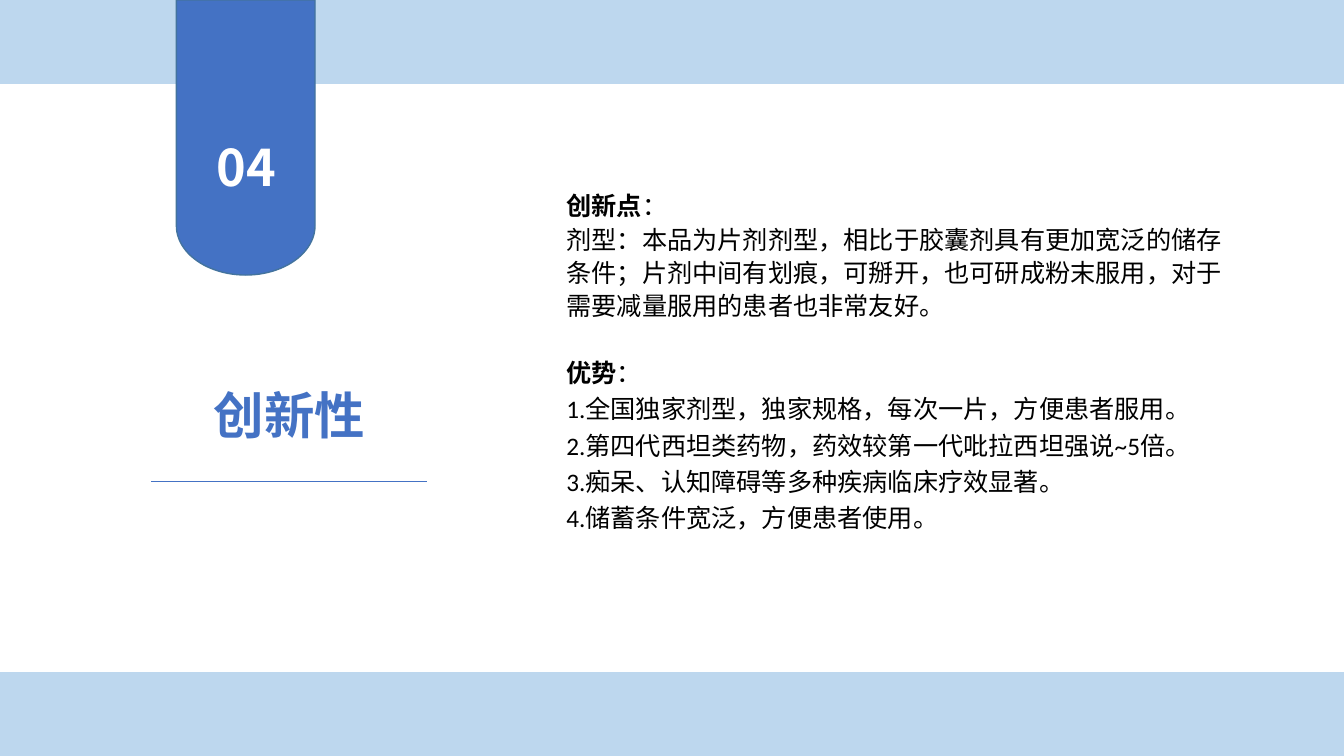
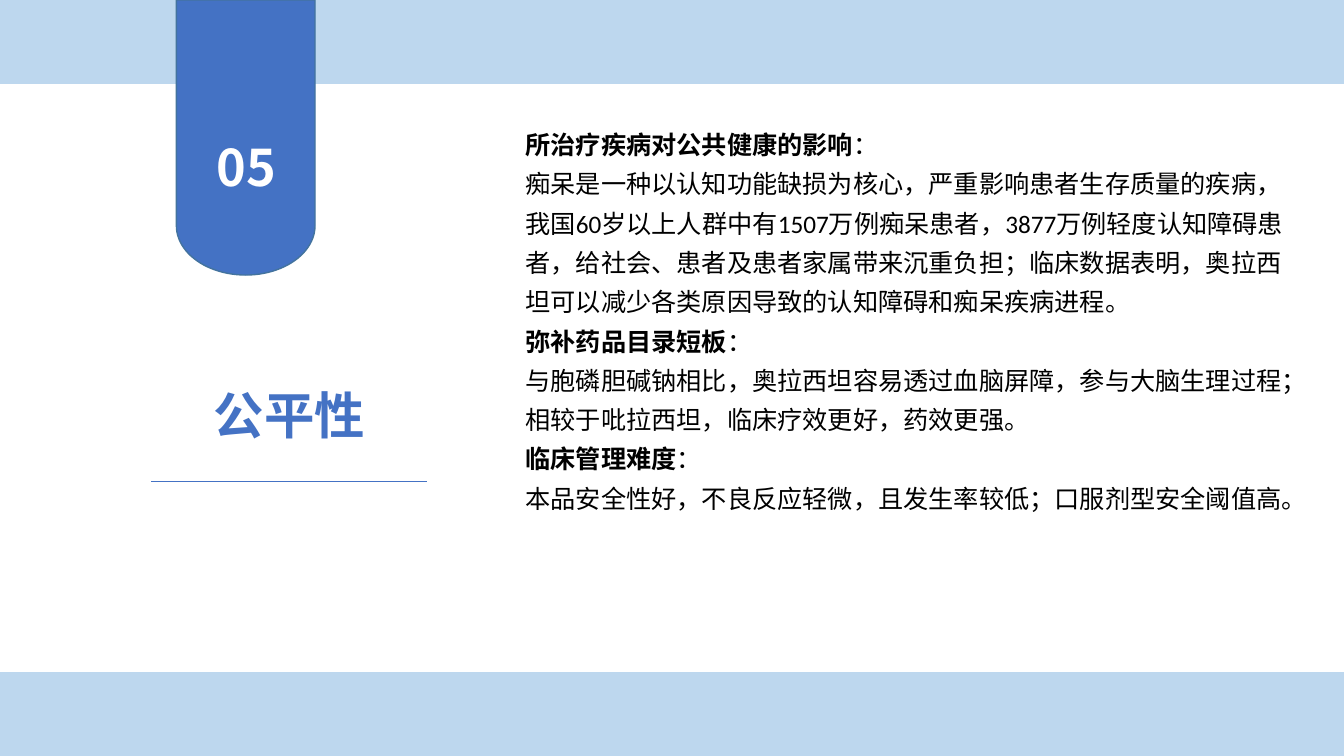
"""Build the innovation and fairness slides of a drug review deck."""
from math import cos, pi, sin

from lxml import etree
from pptx import Presentation
from pptx.dml.color import RGBColor
from pptx.enum.shapes import MSO_CONNECTOR as CONN, MSO_SHAPE as SHAPE
from pptx.enum.text import MSO_ANCHOR as ANCHOR, PP_ALIGN as ALIGN
from pptx.oxml.ns import qn
from pptx.util import Pt

PX = 9525
W, H, BAND_H = 1280, 720, 79
PALE, BLUE, EDGE, WHITE, BLACK = "BDD7EE", "4472C4", "43739E", "FFFFFF", "000000"
FONT, NUMBER_FONT = "Calibri", "Noto Sans CJK SC"

TAB_X, TAB_W, TAB_SIDE, TAB_H = 168, 132, 215, 262
NUMBER_BOX = (193, 124, 83, 68)
TITLE_BOX = (194, 361, 163, 68)
RULE = (144, 458, 407, 458)

SLIDES = [
    {
        "number": "04",
        "title": "创新性",
        "box": (530, 174, 652, 339),
        "body": [
            ("创新点", "：", 1.1, 0),
            ("", "剂型：本品为片剂剂型，相比于胶囊剂具有更加宽泛的储存条件；"
                 "片剂中间有划痕，可掰开，也可研成粉末服用，"
                 "对于需要减量服用的患者也非常友好。", 1.1, 0),
            ("优势", "：", 1.1, 24),
            ("", "1.全国独家剂型，独家规格，每次一片，方便患者服用。", 1.2, 0),
            ("", "2.第四代西坦类药物，药效较第一代吡拉西坦强说~5倍。", 1.2, 0),
            ("", "3.痴呆、认知障碍等多种疾病临床疗效显著。", 1.2, 0),
            ("", "4.储蓄条件宽泛，方便患者使用。", 1.2, 0),
        ],
    },
    {
        "number": "05",
        "title": "公平性",
        "box": (491, 110, 747, 385),
        "body": [
            ("所治疗疾病对公共健康的影响", "：", 1.3, 0),
            ("", "痴呆是一种以认知功能缺损为核心，严重影响患者生存质量的疾病，"
                 "我国60岁以上人群中有1507万例痴呆患者，3877万例轻度认知障碍患者，"
                 "给社会、患者及患者家属带来沉重负担；临床数据表明，"
                 "奥拉西坦可以减少各类原因导致的认知障碍和痴呆疾病进程。", 1.3, 0),
            ("弥补药品目录短板", "：", 1.3, 0),
            ("", "与胞磷胆碱钠相比，奥拉西坦容易透过血脑屏障，参与大脑生理过程；"
                 "相较于吡拉西坦，临床疗效更好，药效更强。", 1.3, 0),
            ("临床管理难度", "：", 1.3, 0),
            ("", "本品安全性好，不良反应轻微，且发生率较低；口服剂型安全阈值高。", 1.3, 0),
        ],
    },
]


def emu(*lengths):
    return [round(v * PX) for v in lengths]


def rgb(color):
    return RGBColor.from_string(color)


def style_font(r, size, color, bold, name=FONT):
    f = r.font
    f.size, f.bold, f.name = Pt(size), bold, name
    f.color.rgb = rgb(color)


def paint(sp, fill, line=None):
    sp.shadow.inherit = False
    sp.fill.solid()
    sp.fill.fore_color.rgb = rgb(fill)
    if line:
        sp.line.color.rgb = rgb(line)
        sp.line.width = Pt(1)
    else:
        sp.line.fill.background()


def set_heading(sp, text, color, name=FONT):
    tf = sp.text_frame
    tf.text = text
    tf.margin_left = tf.margin_right = 0
    p = tf.paragraphs[0]
    p.alignment = ALIGN.CENTER
    style_font(p.runs[0], 36, color, True, name)
    return tf


def add_bands(s):
    for top in (0, H - BAND_H):
        paint(s.shapes.add_shape(SHAPE.RECTANGLE, *emu(0, top, W, BAND_H)), PALE, PALE)


def add_tab(s, number):
    rx, ry, steps = TAB_W / 2, TAB_H - TAB_SIDE, 48
    arc = [(TAB_X + rx + rx * cos(pi * i / steps), TAB_SIDE + ry * sin(pi * i / steps))
           for i in range(steps + 1)]
    fb = s.shapes.build_freeform(*emu(TAB_X, 0))
    fb.add_line_segments([emu(*pt) for pt in [(TAB_X + TAB_W, 0)] + arc])
    paint(fb.convert_to_shape(), BLUE, EDGE)

    sp = s.shapes.add_shape(SHAPE.RECTANGLE, *emu(*NUMBER_BOX))
    paint(sp, BLUE)
    set_heading(sp, number, WHITE, NUMBER_FONT)


def add_title(s, title):
    sp = s.shapes.title
    sp.left, sp.top, sp.width, sp.height = emu(*TITLE_BOX)
    tf = set_heading(sp, title, BLUE)
    tf.word_wrap = False
    tf.vertical_anchor = ANCHOR.TOP

    rule = s.shapes.add_connector(CONN.STRAIGHT, *emu(*RULE))
    rule.line.color.rgb = rgb(BLUE)
    rule.line.width = Pt(0.5)
    etree.SubElement(rule.element.spPr, qn("a:effectLst"))


def add_body(s, box, body):
    tf = s.shapes.add_textbox(*emu(*box)).text_frame
    tf.word_wrap = True
    for i, (label, text, spacing, before) in enumerate(body):
        p = tf.add_paragraph() if i else tf.paragraphs[0]
        p.line_spacing, p.space_before = spacing, Pt(before)
        for part, bold in ((label, True), (text, False)):
            if part:
                r = p.add_run()
                r.text = part
                style_font(r, 18, BLACK, bold)


def main():
    prs = Presentation()
    prs.slide_width, prs.slide_height = emu(W, H)
    for data in SLIDES:
        s = prs.slides.add_slide(prs.slide_layouts[5])
        add_bands(s)
        add_tab(s, data["number"])
        add_body(s, data["box"], data["body"])
        add_title(s, data["title"])
    prs.save("out.pptx")


if __name__ == "__main__":
    main()
